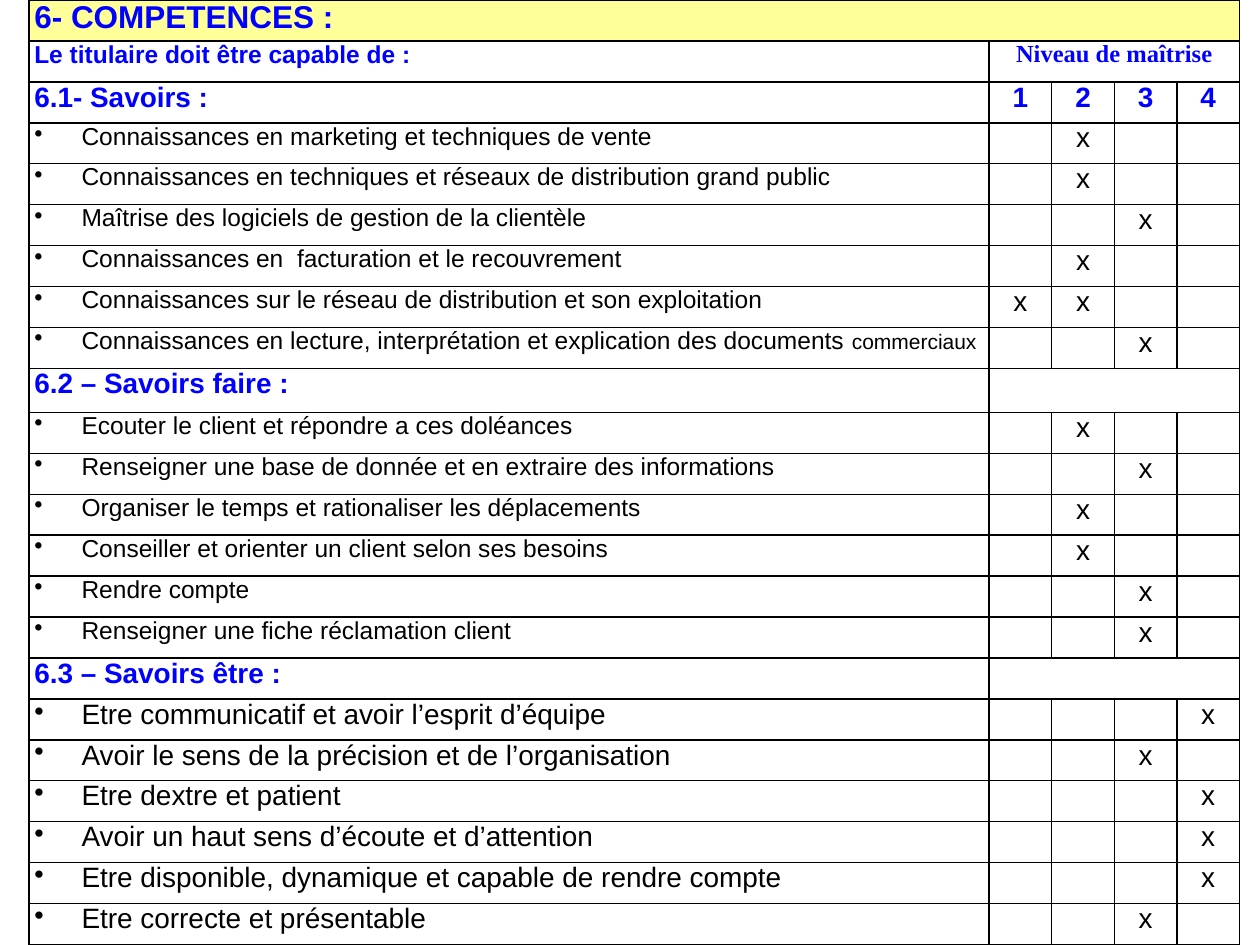
from lxml.etree import SubElement
from pptx import Presentation
from pptx.dml.color import RGBColor
from pptx.enum.text import PP_ALIGN
from pptx.oxml.ns import qn
from pptx.util import Pt

BLACK, BLUE, YELLOW, WHITE = "000000", "0000FF", "FFFF99", "FFFFFF"
LEVELS = 4
ROW_HEIGHT, TALL_ROW_HEIGHT = 23.4, 25.2
SKILL_WIDTH, LEVEL_WIDTH = 548.6, 35.8

# Each section: title, text size, skills with the levels marked.
SECTIONS = [
    ("6.1- Savoirs :", 14, [
        ("Connaissances en marketing et techniques de vente", [2]),
        ("Connaissances en techniques et réseaux de distribution grand public", [2]),
        ("Maîtrise des logiciels de gestion de la clientèle", [3]),
        ("Connaissances en  facturation et le recouvrement", [2]),
        ("Connaissances sur le réseau de distribution et son exploitation", [1, 2]),
        ("Connaissances en lecture, interprétation et explication des documents |commerciaux", [3]),
    ]),
    ("6.2 – Savoirs faire :", 14, [
        ("Ecouter le client et répondre a ces doléances", [2]),
        ("Renseigner une base de donnée et en extraire des informations", [3]),
        ("Organiser le temps et rationaliser les déplacements", [2]),
        ("Conseiller et orienter un client selon ses besoins", [2]),
        ("Rendre compte", [3]),
        ("Renseigner une fiche réclamation client", [3]),
    ]),
    ("6.3 – Savoirs être :", 16, [
        ("Etre communicatif et avoir l’esprit d’équipe", [4]),
        ("Avoir le sens de la précision et de l’organisation", [3]),
        ("Etre dextre et patient", [4]),
        ("Avoir un haut sens d’écoute et d’attention", [4]),
        ("Etre disponible, dynamique et capable de rendre compte", [4]),
        ("Etre correcte et présentable", [3]),
    ]),
]


def rgb(value):
    return RGBColor.from_string(value)


class SheetBuilder:
    """Holds the table style and the slide being filled."""

    font = "Arial"
    side_margin = Pt(3)
    indent = Pt(27)
    border = Pt(1)

    def __init__(self, slide):
        self.slide = slide

    def grid(self, left, top, widths, heights):
        frame = self.slide.shapes.add_table(
            len(heights), len(widths), Pt(left), Pt(top),
            Pt(sum(widths)), Pt(sum(heights)))
        table = frame.table
        table.first_row = table.horz_banding = False
        for column, width in zip(table.columns, widths):
            column.width = Pt(width)
        for row, height in zip(table.rows, heights):
            row.height = Pt(height)
            for cell in row.cells:
                self.plain_cell(cell)
        return table

    def plain_cell(self, cell):
        """Give a cell its margins, black borders and white fill."""
        cell.margin_left = cell.margin_right = self.side_margin
        cell.margin_top = cell.margin_bottom = 0
        properties = cell._tc.get_or_add_tcPr()
        for side in ("lnL", "lnR", "lnT", "lnB"):
            line = SubElement(properties, qn(f"a:{side}"), w=str(self.border))
            fill = SubElement(line, qn("a:solidFill"))
            SubElement(fill, qn("a:srgbClr"), val=BLACK)
        self.fill(cell, WHITE)

    def fill(self, cell, color):
        cell.fill.solid()
        cell.fill.fore_color.rgb = rgb(color)

    def text(self, cell, words, size, color=BLACK, bold=False, centered=False, font=None):
        paragraph = cell.text_frame.paragraphs[0]
        paragraph.alignment = PP_ALIGN.CENTER if centered else PP_ALIGN.LEFT
        style = paragraph.font
        style.name, style.size, style.bold = font or self.font, Pt(size), bold
        style.color.rgb = rgb(color)
        paragraph.add_run().text = words
        return paragraph

    def heading(self, cell, words, size, **style):
        self.text(cell, words, size, BLUE, bold=True, **style)

    def skill(self, cell, words, size):
        """Write a bulleted skill; words after a bar are set smaller."""
        main, _, small = words.partition("|")
        paragraph = self.text(cell, main, size)
        if small:
            ending = paragraph.add_run()
            ending.text = small
            ending.font.size = Pt(12)
        properties = paragraph._p.get_or_add_pPr()
        properties.set("marL", str(self.indent))
        properties.set("indent", str(-self.indent))
        bullet = SubElement(properties, qn("a:buChar"), char="•")
        properties.insert(0, bullet)


def main():
    presentation = Presentation()
    presentation.slide_width, presentation.slide_height = Pt(720), Pt(540)
    sheet = SheetBuilder(presentation.slides.add_slide(presentation.slide_layouts[6]))

    heights = [ROW_HEIGHT] * (2 + sum(1 + len(skills) for _, _, skills in SECTIONS))
    second_section = 3 + len(SECTIONS[0][2])
    heights[second_section] = TALL_ROW_HEIGHT
    table = sheet.grid(16.6, 0, [SKILL_WIDTH] + [LEVEL_WIDTH] * LEVELS, heights)

    title = table.cell(0, 0)
    title.merge(table.cell(0, LEVELS))
    sheet.fill(title, YELLOW)
    sheet.heading(title, "6- COMPETENCES :", 18)

    sheet.heading(table.cell(1, 0), "Le titulaire doit être capable de :", 14)
    table.cell(1, 1).merge(table.cell(1, LEVELS))
    sheet.heading(table.cell(1, 1), "Niveau de maîtrise", 14,
                  centered=True, font="Times New Roman")

    row = 2
    for section, size, skills in SECTIONS:
        sheet.heading(table.cell(row, 0), section, 16)
        if row == 2:
            for level in range(1, LEVELS + 1):
                sheet.heading(table.cell(row, level), str(level), 16, centered=True)
        else:
            table.cell(row, 1).merge(table.cell(row, LEVELS))
        for row, (skill, levels) in enumerate(skills, row + 1):
            sheet.skill(table.cell(row, 0), skill, size)
            for level in levels:
                sheet.text(table.cell(row, level), "x", 16, centered=True)
        row += 1

    presentation.save("out.pptx")


if __name__ == "__main__":
    main()
